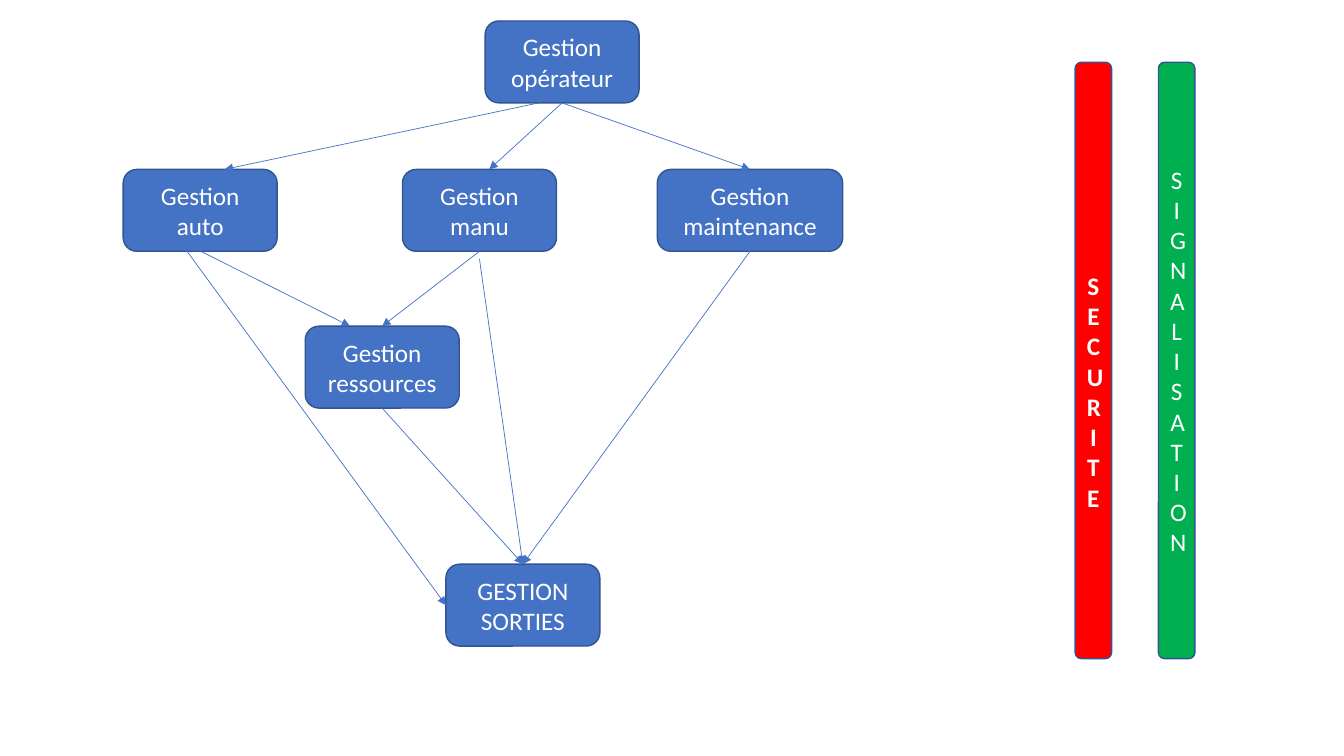
from dataclasses import dataclass
from enum import IntEnum

from lxml.etree import SubElement
from pptx import Presentation
from pptx.dml.color import RGBColor
from pptx.enum.shapes import MSO_CONNECTOR, MSO_SHAPE
from pptx.enum.text import MSO_ANCHOR, PP_ALIGN
from pptx.oxml.ns import qn
from pptx.shapes.autoshape import Shape
from pptx.shapes.connector import Connector
from pptx.slide import Slide
from pptx.util import Pt


@dataclass(frozen=True)
class Theme:
    font: str = "Calibri"
    size: float = 18
    text: str = "FFFFFF"
    block: str = "4472C4"
    outline: str = "325491"
    safety: str = "FF0000"
    signalling: str = "00B050"
    outline_width: float = 1
    arrow_width: float = 0.5


THEME = Theme()


class Side(IntEnum):
    TOP = 0
    LEFT = 1
    BOTTOM = 2


@dataclass(frozen=True)
class Block:
    label: str
    left: float
    top: float
    width: float = 110
    height: float = 58.5
    fill: str = THEME.block
    bold: bool = False
    inset_top: float = 3.6

    def anchor(self, side: Side, shift: tuple[float, float]) -> tuple[float, float]:
        x, y = {
            Side.TOP: (self.left + self.width / 2, self.top),
            Side.LEFT: (self.left, self.top + self.height / 2),
            Side.BOTTOM: (self.left + self.width / 2, self.top + self.height),
        }[side]
        return x + shift[0], y + shift[1]


@dataclass(frozen=True)
class Flow:
    source: Block
    target: Block
    start_shift: tuple[float, float] = (0, 0)
    end_shift: tuple[float, float] = (0, 0)
    entry: Side = Side.TOP


LEVEL_2 = 121
OPERATOR = Block("Gestion opérateur", 346.5, 15)
AUTO = Block("Gestion auto", 88, LEVEL_2)
MANUAL = Block("Gestion manu", 287.5, LEVEL_2)
MAINTENANCE = Block("Gestion maintenance", 469.5, LEVEL_2, width=132.5)
RESOURCES = Block("Gestion ressources", 218, 233)
OUTPUTS = Block("GESTION SORTIES", 318.5, 403)
SAFETY = Block("SECURITE", 768, 44.5, 26, 426, THEME.safety, True, 47.5)
SIGNALLING = Block("SIGNALISATION", 827.5, 44.5, 26, 426, THEME.signalling)

BLOCKS = (OPERATOR, AUTO, MANUAL, MAINTENANCE, RESOURCES, OUTPUTS, SAFETY, SIGNALLING)
FLOWS = (
    Flow(OPERATOR, AUTO, (-16.5, 0), (17.5, 0)),
    Flow(OPERATOR, MANUAL, end_shift=(7, 0)),
    Flow(OPERATOR, MAINTENANCE),
    Flow(AUTO, RESOURCES, (-2.5, -1.5), (-23, 0)),
    Flow(AUTO, OUTPUTS, (-10.5, -1.5), entry=Side.LEFT),
    Flow(MANUAL, RESOURCES),
    Flow(MANUAL, OUTPUTS, (0, 5.5)),
    Flow(MAINTENANCE, OUTPUTS),
    Flow(RESOURCES, OUTPUTS),
)


def write(shape: Shape, text: str, *, bold: bool = False, inset_top: float = 3.6) -> None:
    frame = shape.text_frame
    frame.word_wrap = True
    frame.vertical_anchor = MSO_ANCHOR.MIDDLE
    frame.margin_top = Pt(inset_top)
    paragraph = frame.paragraphs[0]
    paragraph.alignment = PP_ALIGN.CENTER
    run = paragraph.add_run()
    run.text = text
    run.font.name = THEME.font
    run.font.size = Pt(THEME.size)
    run.font.bold = bold
    run.font.color.rgb = RGBColor.from_string(THEME.text)


def draw_block(slide: Slide, block: Block) -> Shape:
    shape = slide.shapes.add_shape(
        MSO_SHAPE.ROUNDED_RECTANGLE,
        Pt(block.left), Pt(block.top), Pt(block.width), Pt(block.height),
    )
    shape.shadow.inherit = False
    shape.fill.solid()
    shape.fill.fore_color.rgb = RGBColor.from_string(block.fill)
    shape.line.color.rgb = RGBColor.from_string(THEME.outline)
    shape.line.width = Pt(THEME.outline_width)
    write(shape, block.label, bold=block.bold, inset_top=block.inset_top)
    return shape


def draw_flow(slide: Slide, flow: Flow, drawn: dict[Block, Shape]) -> Connector:
    start = flow.source.anchor(Side.BOTTOM, flow.start_shift)
    end = flow.target.anchor(flow.entry, flow.end_shift)
    arrow = slide.shapes.add_connector(
        MSO_CONNECTOR.STRAIGHT, *(Pt(length) for length in (*start, *end))
    )
    if flow.start_shift == (0, 0):
        arrow.begin_connect(drawn[flow.source], Side.BOTTOM)
    if flow.end_shift == (0, 0):
        arrow.end_connect(drawn[flow.target], flow.entry)
    arrow.line.color.rgb = RGBColor.from_string(THEME.block)
    arrow.line.width = Pt(THEME.arrow_width)
    SubElement(arrow.line._get_or_add_ln(), qn("a:tailEnd"), type="triangle")
    SubElement(arrow._element.spPr, qn("a:effectLst"))
    return arrow


def main() -> None:
    presentation = Presentation()
    presentation.slide_width = Pt(960)
    presentation.slide_height = Pt(540)
    slide = presentation.slides.add_slide(presentation.slide_layouts[6])
    drawn = {block: draw_block(slide, block) for block in BLOCKS}
    for flow in FLOWS:
        draw_flow(slide, flow, drawn)
    presentation.save("out.pptx")


if __name__ == "__main__":
    main()
